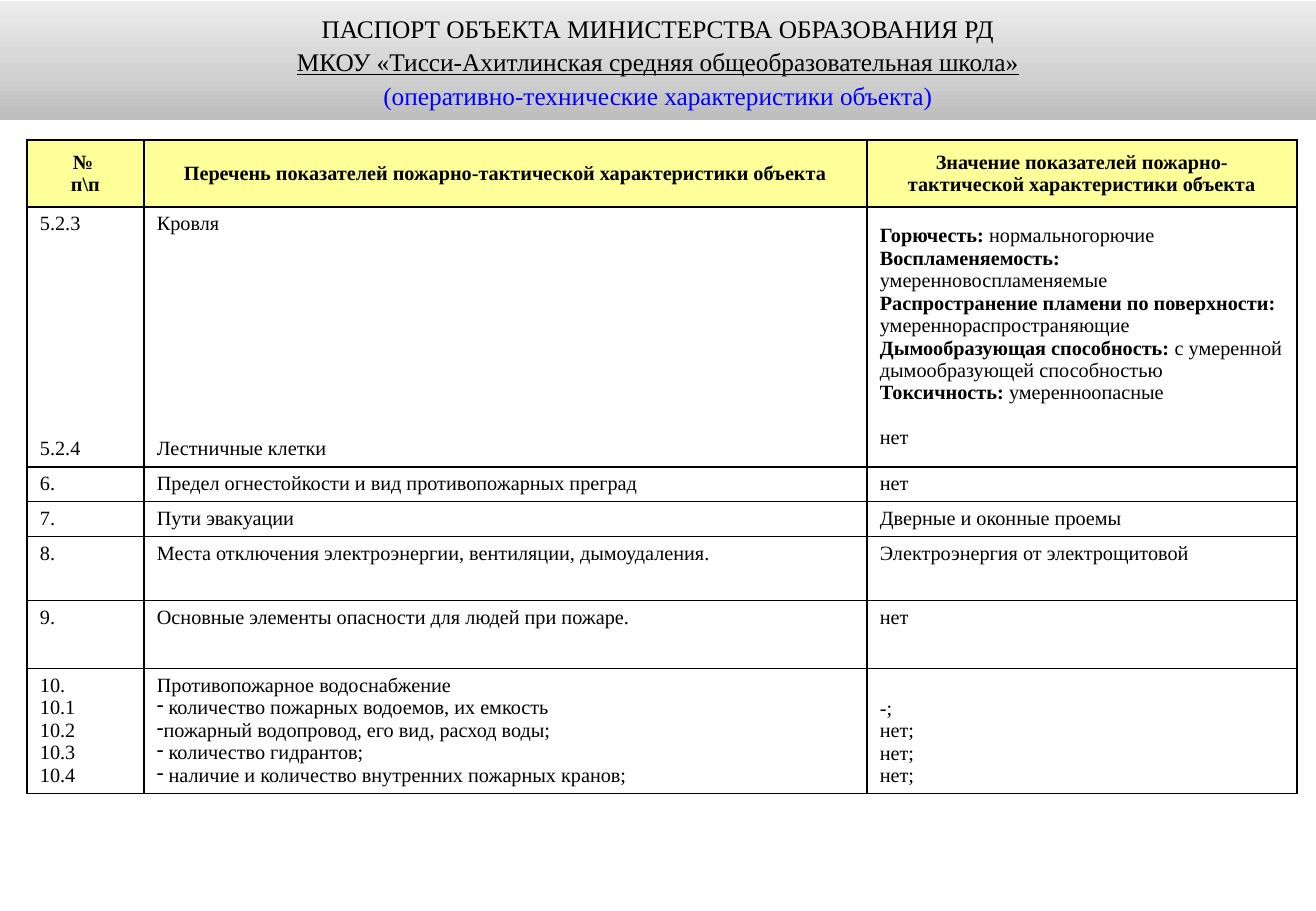
from dataclasses import dataclass

from lxml.etree import SubElement as Sub
from pptx import Presentation
from pptx.dml.color import RGBColor as Rgb
from pptx.enum.shapes import MSO_SHAPE as Shape
from pptx.enum.text import MSO_ANCHOR as Anchor, PP_ALIGN as Align
from pptx.oxml.ns import qn
from pptx.util import Emu, Pt

SCALE = 914400 / 121.5


@dataclass(frozen=True)
class Theme:
    font: str = "Times New Roman"
    title: int = 15
    body: int = 12
    line: float = 13.28  # height of one body line, pt
    ink: str = "000000"
    blue: str = "0000FF"
    head: str = "FFFF99"
    paper: str = "FFFFFF"
    band: tuple = ((0, "BCBCBC"), (35, "D0D0D0"), (100, "EDEDED"))


@dataclass
class Para:
    runs: list  # pairs of text and bold
    gap: int = 0  # body lines left free above
    dash: bool = False


THEME = Theme()

TITLE = [
    ("ПАСПОРТ ОБЪЕКТА МИНИСТЕРСТВА ОБРАЗОВАНИЯ РД", THEME.ink, False),
    ("МКОУ «Тисси-Ахитлинская средняя общеобразовательная школа»", THEME.ink, True),
    ("(оперативно-технические характеристики объекта)", THEME.blue, False),
]


def plain(text, gap=0, dash=False):
    return Para([(text, False)], gap, dash)


def pair(label, value):
    return Para([(label, True), (value, False)])


def bold(text):
    return Para([(text, True)])


COLS = [117, 723, 430]
HEAD = [
    [bold("№ "), bold("п\\п")],
    [bold("Перечень показателей пожарно-тактической характеристики объекта")],
    [bold("Значение показателей пожарно-тактической характеристики объекта")],
]
ROOF = [
    pair("Горючесть:", " нормальногорючие"),
    pair("Воспламеняемость: ", "умеренновоспламеняемые"),
    bold("Распространение пламени по поверхности:"),
    plain("умереннораспространяющие"),
    pair("Дымообразующая способность: ", "с умеренной дымообразующей способностью"),
    pair("Токсичность:", " умеренноопасные"),
    plain("нет", gap=1),
]
WATER = [
    plain("Противопожарное водоснабжение"),
    plain(" количество пожарных водоемов, их емкость", dash=True),
    plain("пожарный водопровод, его вид, расход воды;", dash=True),
    plain(" количество гидрантов;", dash=True),
    plain(" наличие и количество внутренних пожарных кранов;", dash=True),
]
# Row height, then the cells
ROWS = [
    (67, HEAD),
    (260, [[plain("5.2.3"), plain("5.2.4", gap=9)],
           [plain("Кровля"), plain("Лестничные клетки", gap=9)], ROOF]),
    (34, ["6.", "Предел огнестойкости и вид противопожарных преград", "нет"]),
    (35, ["7.", "Пути эвакуации", "Дверные и оконные проемы"]),
    (64, ["8.", "Места отключения электроэнергии, вентиляции, дымоудаления.",
          "Электроэнергия от электрощитовой"]),
    (68, ["9.", "Основные элементы опасности для людей при пожаре.", "нет"]),
    (125, [[plain(n) for n in ("10.", "10.1", "10.2", "10.3", "10.4")], WATER,
           [plain(v) for v in ("-;", "нет;", "нет;", "нет;")]]),
]
ANCHORS = {(1, 2): Anchor.MIDDLE, (6, 2): Anchor.BOTTOM}


def px(n):
    return Emu(round(n * SCALE))


def add_run(para, text, size, color, heavy=False, under=False):
    run = para.add_run()
    run.text = text
    font = run.font
    font.name, font.size = THEME.font, Pt(size)
    font.bold, font.underline = heavy, under
    font.color.rgb = Rgb.from_string(color)


def paras(frame, items):
    """Pair each item with a paragraph of the frame."""
    for i, item in enumerate(items):
        yield (frame.add_paragraph() if i else frame.paragraphs[0]), item


def add_band(slide, box):
    shape = slide.shapes.add_shape(Shape.RECTANGLE, *map(px, box))
    shape.shadow.inherit = False
    shape.line.fill.background()
    # Three-stop gradient, light at the top
    shape.fill.gradient()
    shape.fill.gradient_angle = 90
    stops = shape._element.spPr.find(".//" + qn("a:gsLst"))
    stops.clear()
    for pos, color in THEME.band:
        stop = Sub(stops, qn("a:gs"), pos=str(pos * 1000))
        Sub(stop, qn("a:srgbClr"), val=color)
    # Title lines
    frame = shape.text_frame
    frame.word_wrap = True
    frame.vertical_anchor = Anchor.MIDDLE
    for para, (text, color, under) in paras(frame, TITLE):
        para.alignment = Align.CENTER
        para.line_spacing = 1.09
        add_run(para, text, THEME.title, color, under=under)


def add_edges(cell):
    props = cell._tc.get_or_add_tcPr()
    for side in "LRTB":
        edge = Sub(props, qn("a:ln" + side), w=str(Pt(1)))
        fill = Sub(edge, qn("a:solidFill"))
        Sub(fill, qn("a:srgbClr"), val=THEME.ink)


def fill_cell(cell, items, color, anchor, align):
    add_edges(cell)
    cell.fill.solid()
    cell.fill.fore_color.rgb = Rgb.from_string(color)
    cell.margin_left = cell.margin_right = px(13)
    cell.margin_top = cell.margin_bottom = px(6)
    cell.vertical_anchor = anchor
    for para, item in paras(cell.text_frame, items):
        para.alignment = align
        if item.gap:
            para.space_before = Pt(round(item.gap * THEME.line, 1))
        if item.dash:
            props = para._p.get_or_add_pPr()
            props.set("marL", "0")
            props.set("indent", "0")
            Sub(props, qn("a:buChar"), char="-")
        for text, heavy in item.runs:
            add_run(para, text, THEME.body, THEME.ink, heavy)


def add_grid(slide, box):
    frame = slide.shapes.add_table(len(ROWS), len(COLS), *map(px, box))
    table = frame.table
    table.first_row = table.horz_banding = False
    for col, width in zip(table.columns, COLS):
        col.width = px(width)
    for r, (height, cells) in enumerate(ROWS):
        table.rows[r].height = px(height)
        for c, items in enumerate(cells):
            if isinstance(items, str):
                items = [plain(items)]
            if r == 0:
                look = THEME.head, Anchor.MIDDLE, Align.CENTER
            else:
                look = THEME.paper, ANCHORS.get((r, c), Anchor.TOP), Align.LEFT
            fill_cell(table.cell(r, c), items, *look)


def main():
    deck = Presentation()
    deck.slide_width, deck.slide_height = px(1316), px(911)
    slide = deck.slides.add_slide(deck.slide_layouts[6])
    # Indicator table, then the title band
    add_grid(slide, (27, 140, sum(COLS), sum(h for h, _ in ROWS)))
    add_band(slide, (0, 1, 1316, 119))
    deck.save("out.pptx")


if __name__ == "__main__":
    main()
